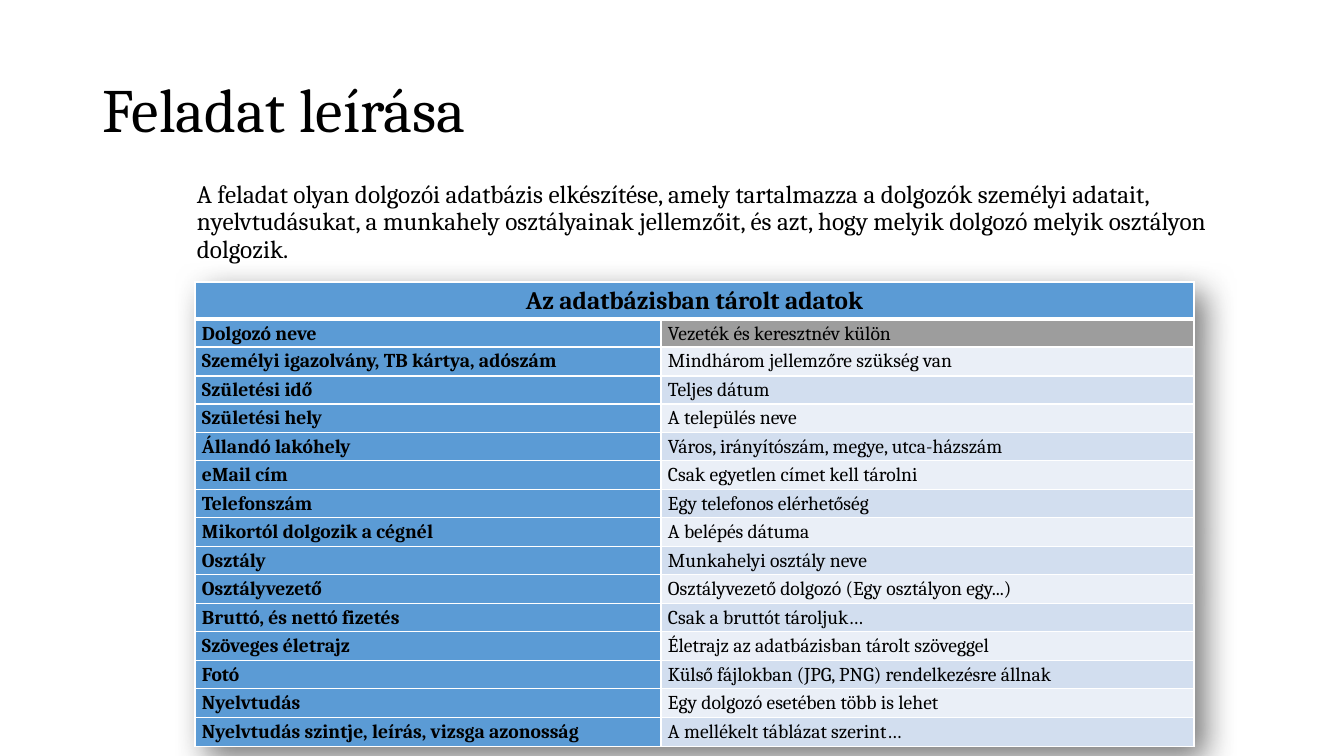
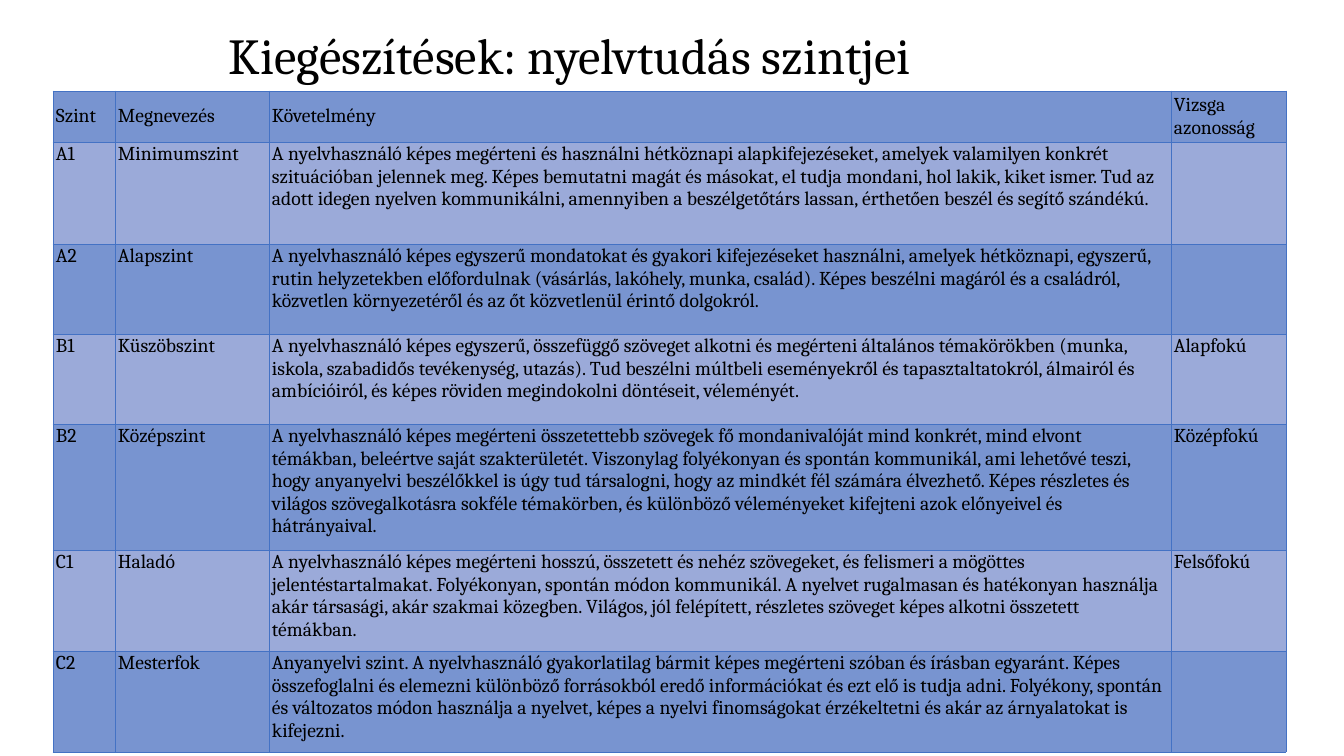
from dataclasses import dataclass
from typing import NamedTuple, Optional

from lxml import etree
from pptx import Presentation
from pptx.dml.color import RGBColor
from pptx.enum.text import MSO_ANCHOR as ANCHOR, PP_ALIGN as ALIGN
from pptx.oxml import parse_xml
from pptx.oxml.ns import qn
from pptx.util import Emu, Pt

# Shared scale, font and colours
PX_PER_INCH = 100.8
FONT = "Cambria"
BLACK = RGBColor(0x00, 0x00, 0x00)
WHITE = RGBColor(0xFF, 0xFF, 0xFF)
BLUE = RGBColor(0x5B, 0x9B, 0xD5)
GREY = RGBColor(0x9D, 0x9D, 0x9D)
PALE = RGBColor(0xEA, 0xEF, 0xF7)
PALE_BLUE = RGBColor(0xD2, 0xDE, 0xEF)
GRID = RGBColor(0x44, 0x72, 0xC4)
BAND_DARK = RGBColor(0x78, 0x94, 0xD0)
BAND_LIGHT = RGBColor(0x9B, 0xAA, 0xD9)

A_NS = "http://schemas.openxmlformats.org/drawingml/2006/main"
TABLE_SHADOW = (
    f'<a:effectLst xmlns:a="{A_NS}">'
    '<a:outerShdw blurRad="292100" dist="139700" dir="2700000" algn="tl" rotWithShape="0">'
    '<a:srgbClr val="333333"><a:alpha val="65000"/></a:srgbClr>'
    '</a:outerShdw></a:effectLst>'
)


class Box(NamedTuple):
    x: int
    y: int
    w: int
    h: int


class DataField(NamedTuple):
    label: str
    note: str


class Level(NamedTuple):
    code: str
    name: str
    requirement: str
    exam: str


@dataclass(frozen=True)
class CellStyle:
    fill: RGBColor
    border: RGBColor
    width: float
    pad_x: int
    pad_y: int
    size: int = 14
    bold: bool = False
    align: ALIGN = ALIGN.LEFT
    anchor: ANCHOR = ANCHOR.TOP
    spacing: Optional[float] = None
    top: Optional[float] = None
    bottom: Optional[float] = None


FIELDS = [
    DataField("Dolgozó neve", "Vezeték és keresztnév külön"),
    DataField("Személyi igazolvány, TB kártya, adószám", "Mindhárom jellemzőre szükség van"),
    DataField("Születési idő", "Teljes dátum"),
    DataField("Születési hely", "A település neve"),
    DataField("Állandó lakóhely", "Város, irányítószám, megye, utca-házszám"),
    DataField("eMail cím", "Csak egyetlen címet kell tárolni"),
    DataField("Telefonszám", "Egy telefonos elérhetőség"),
    DataField("Mikortól dolgozik a cégnél", "A belépés dátuma"),
    DataField("Osztály", "Munkahelyi osztály neve"),
    DataField("Osztályvezető", "Osztályvezető dolgozó (Egy osztályon egy...)"),
    DataField("Bruttó, és nettó fizetés", "Csak a bruttót tároljuk…"),
    DataField("Szöveges életrajz", "Életrajz az adatbázisban tárolt szöveggel"),
    DataField("Fotó", "Külső fájlokban (JPG, PNG) rendelkezésre állnak"),
    DataField("Nyelvtudás", "Egy dolgozó esetében több is lehet"),
    DataField("Nyelvtudás szintje, leírás, vizsga azonosság", "A mellékelt táblázat szerint…"),
]

LEVELS = [
    Level("Szint", "Megnevezés", "Követelmény", "Vizsga azonosság"),
    Level("A1", "Minimumszint",
          "A nyelvhasználó képes megérteni és használni hétköznapi alapkifejezéseket, amelyek "
          "valamilyen konkrét szituációban jelennek meg. Képes bemutatni magát és másokat, el tudja "
          "mondani, hol lakik, kiket ismer. Tud az adott idegen nyelven kommunikálni, amennyiben a "
          "beszélgetőtárs lassan, érthetően beszél és segítő szándékú.", ""),
    Level("A2", "Alapszint",
          "A nyelvhasználó képes egyszerű mondatokat és gyakori kifejezéseket használni, amelyek "
          "hétköznapi, egyszerű, rutin helyzetekben előfordulnak (vásárlás, lakóhely, munka, család). "
          "Képes beszélni magáról és a családról, közvetlen környezetéről és az őt közvetlenül "
          "érintő dolgokról.", ""),
    Level("B1", "Küszöbszint",
          "A nyelvhasználó képes egyszerű, összefüggő szöveget alkotni és megérteni általános "
          "témakörökben (munka, iskola, szabadidős tevékenység, utazás). Tud beszélni múltbeli "
          "eseményekről és tapasztaltatokról, álmairól és ambícióiról, és képes röviden megindokolni "
          "döntéseit, véleményét.", "Alapfokú"),
    Level("B2", "Középszint",
          "A nyelvhasználó képes megérteni összetettebb szövegek fő mondanivalóját mind konkrét, mind "
          "elvont témákban, beleértve saját szakterületét. Viszonylag folyékonyan és spontán "
          "kommunikál, ami lehetővé teszi, hogy anyanyelvi beszélőkkel is úgy tud társalogni, hogy az "
          "mindkét fél számára élvezhető. Képes részletes és világos szövegalkotásra sokféle "
          "témakörben, és különböző véleményeket kifejteni azok előnyeivel és hátrányaival.",
          "Középfokú"),
    Level("C1", "Haladó",
          "A nyelvhasználó képes megérteni hosszú, összetett és nehéz szövegeket, és felismeri a "
          "mögöttes jelentéstartalmakat. Folyékonyan, spontán módon kommunikál. A nyelvet rugalmasan "
          "és hatékonyan használja akár társasági, akár szakmai közegben. Világos, jól felépített, "
          "részletes szöveget képes alkotni összetett témákban.", "Felsőfokú"),
    Level("C2", "Mesterfok",
          "Anyanyelvi szint. A nyelvhasználó gyakorlatilag bármit képes megérteni szóban és írásban "
          "egyaránt. Képes összefoglalni és elemezni különböző forrásokból eredő információkat és ezt "
          "elő is tudja adni. Folyékony, spontán és változatos módon használja a nyelvet, képes a "
          "nyelvi finomságokat érzékeltetni és akár az árnyalatokat is kifejezni.", ""),
]


def px(n: int) -> Emu:
    return Emu(round(n * 914400 / PX_PER_INCH))


# Text
def add_run(p, text: str, size: int, bold: bool = False) -> None:
    r = p.add_run()
    r.text = text
    r.font.name = FONT
    r.font.size = Pt(size)
    r.font.bold = bold
    r.font.color.rgb = BLACK


def add_text(s, box: Box, text: str, size: int, anchor: ANCHOR = ANCHOR.TOP):
    sp = s.shapes.add_textbox(*map(px, box))
    tf = sp.text_frame
    tf.word_wrap = True
    tf.vertical_anchor = anchor
    p = tf.paragraphs[0]
    p.line_spacing = 0.9
    add_run(p, text, size)
    return sp


def add_title(s, box: Box, text: str, size: int) -> None:
    sp = add_text(s, box, text, size, ANCHOR.MIDDLE)
    sp.fill.solid()
    sp.fill.fore_color.rgb = WHITE
    color = sp.fill._xPr.find(qn("a:solidFill"))[0]
    etree.SubElement(color, qn("a:alpha")).set("val", "55000")


# Tables
def add_borders(cell, style: CellStyle) -> None:
    tc_pr = cell._tc.get_or_add_tcPr()
    widths = {"L": style.width, "R": style.width,
              "T": style.top or style.width, "B": style.bottom or style.width}
    for side, width in widths.items():
        ln = etree.SubElement(tc_pr, qn(f"a:ln{side}"), w=str(Pt(width)))
        fill = etree.SubElement(ln, qn("a:solidFill"))
        etree.SubElement(fill, qn("a:srgbClr"), val=str(style.border))


def fill_cell(cell, text: str, style: CellStyle) -> None:
    add_borders(cell, style)
    cell.fill.solid()
    cell.fill.fore_color.rgb = style.fill
    cell.margin_left = cell.margin_right = px(style.pad_x)
    cell.margin_top = cell.margin_bottom = px(style.pad_y)
    cell.vertical_anchor = style.anchor
    p = cell.text_frame.paragraphs[0]
    p.alignment = style.align
    if style.spacing:
        p.line_spacing = style.spacing
    if text:
        add_run(p, text, style.size, style.bold)
    else:
        p.font.size = Pt(style.size)


def add_grid(s, x: int, y: int, cols: list[int], rows: list[int]):
    box = Box(x, y, sum(cols), sum(rows))
    table = s.shapes.add_table(len(rows), len(cols), *map(px, box)).table
    table.first_row = table.horz_banding = False
    tbl_pr = table._tbl.tblPr
    for child in list(tbl_pr):
        tbl_pr.remove(child)
    for col, width in zip(table.columns, cols):
        col.width = px(width)
    for row, height in zip(table.rows, rows):
        row.height = px(height)
    return table


# Slides
def build_task_slide(s) -> None:
    add_title(s, Box(93, 40, 1159, 146), "Feladat leírása", 44)
    add_text(s, Box(187, 177, 1041, 119),
             "A feladat olyan dolgozói adatbázis elkészítése, amely tartalmazza a dolgozók személyi "
             "adatait, nyelvtudásukat, a munkahely osztályainak jellemzőit, és azt, hogy melyik "
             "dolgozó melyik osztályon dolgozik.", 18)

    # Field rows share the body height to the nearest pixel
    n, body_h = len(FIELDS), 428
    heights = [body_h * (i + 1) // n - body_h * i // n for i in range(n)]
    table = add_grid(s, 195, 282, [466, 533], [37, *heights])
    table._tbl.tblPr.append(parse_xml(TABLE_SHADOW))

    def style(fill: RGBColor, **extra) -> CellStyle:
        return CellStyle(fill, WHITE, 1, 7, 0, spacing=1.15, **extra)

    head = style(BLUE, size=18, bold=True, align=ALIGN.CENTER, bottom=3)
    for col, text in enumerate(["Az adatbázisban tárolt adatok", ""]):
        fill_cell(table.cell(0, col), text, head)
    table.cell(0, 0).merge(table.cell(0, 1))

    for i, field in enumerate(FIELDS):
        note_fill = GREY if i == 0 else PALE if i % 2 else PALE_BLUE
        top = 3 if i == 0 else None
        fill_cell(table.cell(i + 1, 0), field.label, style(BLUE, bold=True, top=top))
        fill_cell(table.cell(i + 1, 1), field.note, style(note_fill, top=top))


def build_levels_slide(s) -> None:
    add_title(s, Box(219, 25, 907, 66), "Kiegészítések: nyelvtudás szintjei", 36)
    table = add_grid(s, 53, 91, [62, 154, 902, 115], [51, 102, 90, 90, 126, 101, 101])
    for i, level in enumerate(LEVELS):
        fill = BAND_LIGHT if i % 2 else BAND_DARK
        anchor = ANCHOR.TOP if i else ANCHOR.MIDDLE
        style = CellStyle(fill, GRID, 0.5, 3, 1, anchor=anchor)
        for col, text in enumerate(level):
            fill_cell(table.cell(i, col), text, style)


def main() -> None:
    prs = Presentation()
    prs.slide_width, prs.slide_height = px(1344), px(756)
    for build in (build_task_slide, build_levels_slide):
        build(prs.slides.add_slide(prs.slide_layouts[6]))
    prs.save("out.pptx")


if __name__ == "__main__":
    main()
